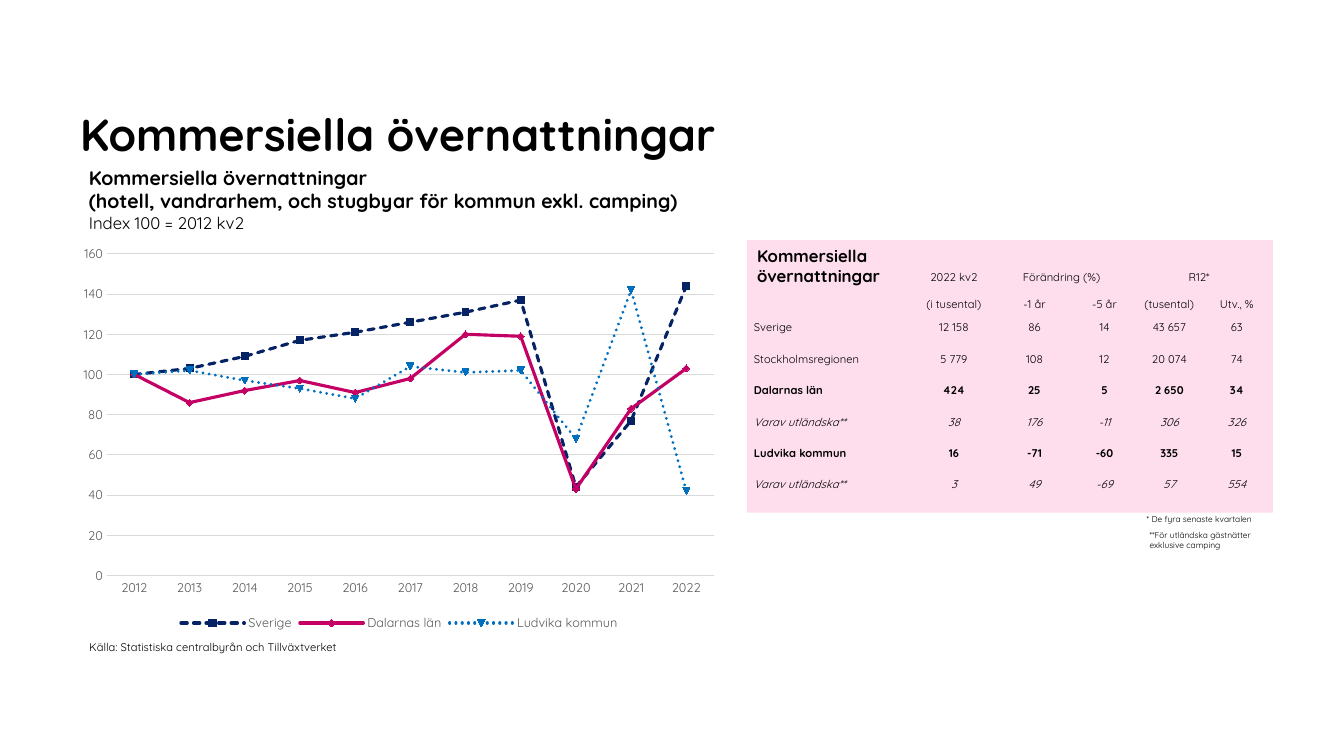
from pptx import Presentation
from pptx.chart.data import CategoryChartData
from pptx.dml.color import RGBColor
from pptx.enum.chart import XL_CHART_TYPE as Kind, XL_LEGEND_POSITION as Spot, XL_TICK_MARK as Tick
from pptx.enum.dml import MSO_LINE as Dash
from pptx.enum.shapes import MSO_SHAPE as Form
from pptx.enum.text import MSO_ANCHOR as Anchor, PP_ALIGN as Align
from pptx.oxml import parse_xml
from pptx.oxml.ns import nsdecls, qn
from pptx.util import Cm, Pt

BLACK, GREY, RULE, PINK = "000000", "595959", "D9D9D9", "FEDEED"
BARE = "{2D5ABB26-0587-4C30-8999-92F81FD0307C}"  # table style: no fill, no grid

YEARS = [str(year) for year in range(2012, 2023)]
SERIES = [
    ("Sverige", "052364", Dash.SQUARE_DOT,
     [100, 103, 109, 117, 121, 126, 131, 137, 44, 77, 144]),
    ("Dalarnas län", "C40064", None,
     [100, 86, 92, 97, 91, 98, 120, 119, 43, 83, 103]),
    ("Ludvika kommun", "006EBF", Dash.ROUND_DOT,
     [100, 102, 97, 93, 88, 104, 101, 102, 68, 142, 42]),
]
ROWS = [
    ["", "2022 kv2", "Förändring (%)", "", "R12*", ""],
    ["", "(i tusental)", "-1 år", "-5 år", "(tusental)", "Utv., %"],
    ["Sverige", "12 158", "86", "14", "43 657", "63"],
    ["Stockholmsregionen", "5 779", "108", "12", "20 074", "74"],
    ["Dalarnas län", "424", "25", "5", "2 650", "34"],
    ["Varav utländska**", "38", "176", "-11", "306", "326"],
    ["Ludvika kommun", "16", "-71", "-60", "335", "15"],
    ["Varav utländska**", "3", "49", "-69", "57", "554"],
]
HEADS = 2
BOLD = ("Dalarnas län", "Ludvika kommun")
WIDTHS = [4.29, 1.9, 2.16, 1.37, 1.9, 1.5]
HEIGHTS = [0.66, 0.69] + [0.79] * 6


def tint(code):
    return RGBColor.from_string(code)


class Page:
    face = "Quicksand"

    def __init__(self, slide):
        self.shapes = slide.shapes

    def style(self, font, size, color=BLACK, bold=False, italic=False):
        font.name, font.size = self.face, Pt(size)
        font.bold, font.italic = bold, italic
        font.color.rgb = tint(color)

    def text(self, box, lines, pad=(0.25, 0.13), anchor=Anchor.TOP):
        """Write lines of (words, size, bold), one paragraph each."""
        frame = self.shapes.add_textbox(*map(Cm, box)).text_frame
        frame.word_wrap = True
        frame.vertical_anchor = anchor
        frame.margin_left = frame.margin_right = Cm(pad[0])
        frame.margin_top = frame.margin_bottom = Cm(pad[1])
        for i, (words, size, bold) in enumerate(lines):
            para = frame.add_paragraph() if i else frame.paragraphs[0]
            para.text = words
            self.style(para.font, size, bold=bold)

    def panel(self, box, color):
        shape = self.shapes.add_shape(Form.RECTANGLE, *map(Cm, box))
        shape.shadow.inherit = False
        shape.fill.solid()
        shape.fill.fore_color.rgb = tint(color)
        shape.line.fill.background()

    def table(self, left, top):
        box = map(Cm, (left, top, sum(WIDTHS), sum(HEIGHTS)))
        table = self.shapes.add_table(len(ROWS), len(WIDTHS), *box).table
        table.first_row = table.horz_banding = False
        table._tbl.tblPr.find(qn("a:tableStyleId")).text = BARE
        for col, width in zip(table.columns, WIDTHS):
            col.width = Cm(width)
        for row, height in zip(table.rows, HEIGHTS):
            row.height = Cm(height)
        for r, row in enumerate(ROWS):
            for c, words in enumerate(row):
                self.cell(table.cell(r, c), words, row[0], r < HEADS, c == 0)
        for c in (2, 4):
            table.cell(0, c).merge(table.cell(0, c + 1))

    def cell(self, cell, words, label, head, first):
        cell.fill.background()
        cell.margin_left = Cm(0.2 if first else 0.03)
        cell.margin_right = cell.margin_top = Cm(0.03)
        cell.margin_bottom = 0
        cell.vertical_anchor = Anchor.BOTTOM if head else Anchor.MIDDLE
        para = cell.text_frame.paragraphs[0]
        para.text = words
        para.alignment = Align.LEFT if first else Align.CENTER
        self.style(para.font, 8, bold=label in BOLD, italic=label.startswith("Varav"))

    def chart(self, box):
        data = CategoryChartData()
        data.categories = YEARS
        for name, _, _, vals in SERIES:
            data.add_series(name, vals)
        chart = self.shapes.add_chart(Kind.LINE, *map(Cm, box), data).chart
        self.style(chart.font, 10)
        chart.has_title = False
        chart.has_legend = True
        chart.legend.position = Spot.BOTTOM
        chart.legend.include_in_layout = False
        self.style(chart.legend.font, 9, GREY)
        self.axes(chart.category_axis, chart.value_axis)
        for line, (_, color, dash, _) in zip(chart.plots[0].series, SERIES):
            self.curve(line, color, dash)
        self.place(chart)

    def axes(self, years, scale):
        for axis in (years, scale):
            axis.major_tick_mark = axis.minor_tick_mark = Tick.NONE
            self.style(axis.tick_labels.font, 9, GREY)
        scale.minimum_scale, scale.maximum_scale, scale.major_unit = 0, 160, 20
        scale.format.line.fill.background()
        for rule in (years.format.line, scale.major_gridlines.format.line):
            rule.color.rgb = tint(RULE)
            rule.width = Pt(0.75)

    def curve(self, series, color, dash):
        series.smooth = False
        series.marker.style = None
        stroke = series.format.line
        stroke.color.rgb = tint(color)
        stroke.width = Pt(2.25)
        if dash:
            stroke.dash_style = dash
        series._element.find(".//" + qn("a:ln")).set("cap", "rnd")

    def place(self, chart):
        """Pin the inner plot area as shares of the chart frame."""
        area = chart._chartSpace.chart.plotArea
        old = area.find(qn("c:layout"))
        if old is not None:
            area.remove(old)
        shares = {"x": 0.055, "y": 0.038, "w": 0.924, "h": 0.812}
        parts = "".join(f'<c:{k} val="{v}"/>' for k, v in shares.items())
        area.insert(0, parse_xml(
            f'<c:layout {nsdecls("c")}><c:manualLayout><c:layoutTarget val="inner"/>'
            f'<c:xMode val="edge"/><c:yMode val="edge"/>{parts}</c:manualLayout></c:layout>'))


def main():
    deck = Presentation()
    deck.slide_width, deck.slide_height = Cm(33.87), Cm(19.05)
    page = Page(deck.slides.add_slide(deck.slide_layouts[6]))
    topic = "Kommersiella övernattningar"
    page.text((2.02, 0.94, 23.4, 3.1), [(topic, 32, True)], (0, 0), Anchor.BOTTOM)
    page.text((2, 16, 7.04, 0.6),
              [("Källa: Statistiska centralbyrån och Tillväxtverket", 8, False)])
    page.panel((18.83, 6.05, 13.25, 6.87), PINK)
    page.text((18.83, 6.05, 4.2, 1.3), [(topic.replace(" ", "\v"), 12, True)])
    page.text((28.65, 12.83, 3.4, 0.5), [("* De fyra senaste kvartalen", 6, False)])
    page.text((1.99, 4.04, 16.13, 1.96), [
        (topic, 14, True),
        ("(hotell, vandrarhem, och stugbyar för kommun exkl. camping)", 14, True),
        ("Index 100 = 2012 kv2", 12, False)])
    page.table(18.8, 6.5)
    page.text((28.72, 13.23, 3.16, 0.75),
              [("**För utländska gästnätter exklusive camping", 6, False)])
    page.chart((1.78, 6.02, 16.56, 9.98))
    deck.save("out.pptx")


if __name__ == "__main__":
    main()
